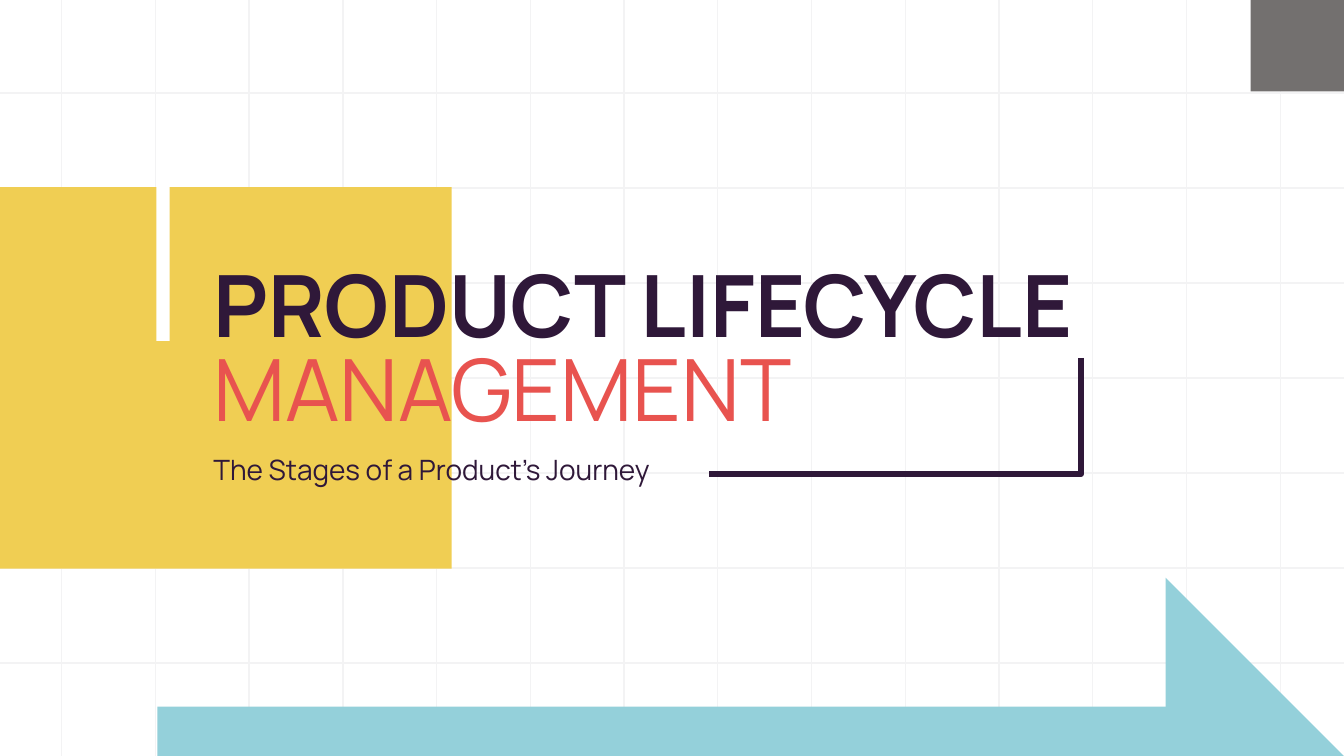
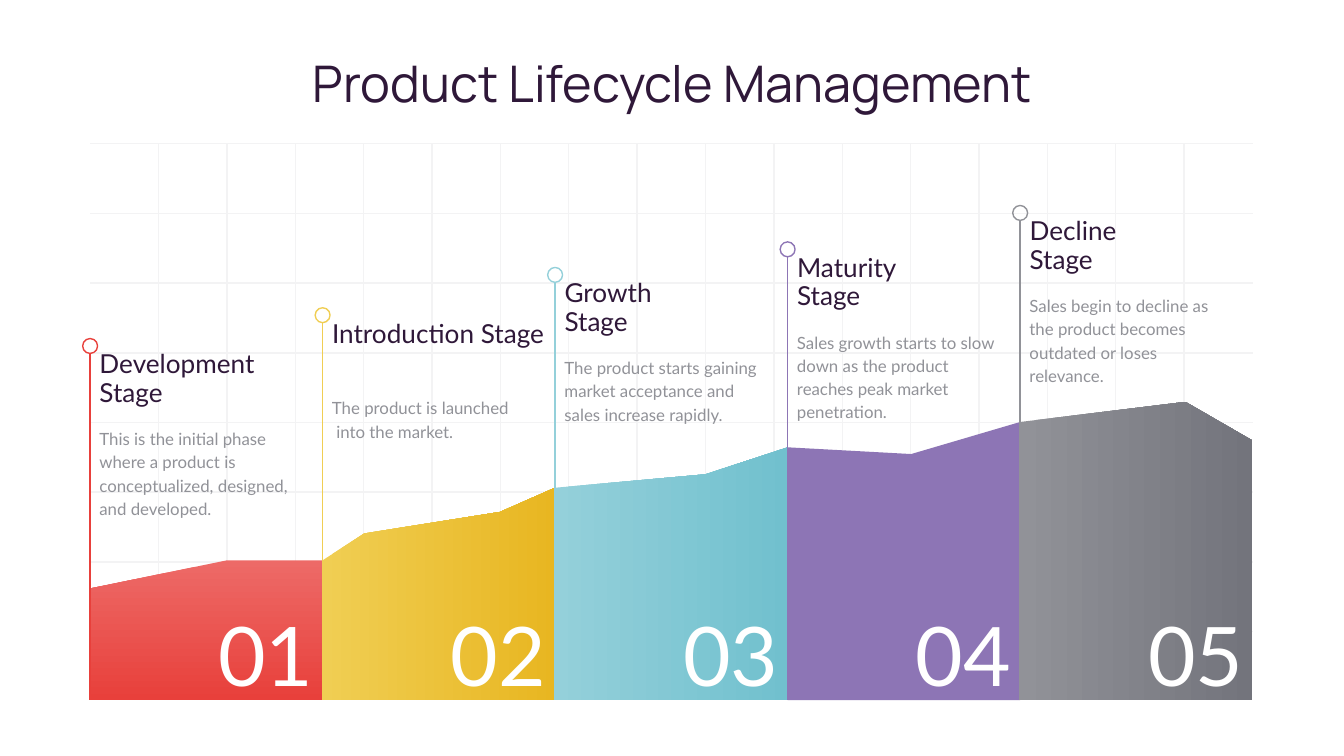
from dataclasses import dataclass

from lxml import etree
from pptx import Presentation
from pptx.dml.color import RGBColor
from pptx.enum import shapes, text
from pptx.oxml import ns
from pptx.util import Pt

# Shared look
INK = RGBColor(0x2F, 0x18, 0x39)
WHITE = RGBColor(0xFF, 0xFF, 0xFF)
GRID = RGBColor(0xF3, 0xF3, 0xF4)
CORAL = RGBColor(0xE8, 0x53, 0x4F)
LIGHT_RED = RGBColor(0xED, 0x6A, 0x67)
RED = RGBColor(0xE8, 0x40, 0x3B)
YELLOW = RGBColor(0xF0, 0xCE, 0x53)
AMBER = RGBColor(0xE8, 0xB6, 0x21)
TEAL = RGBColor(0x94, 0xD0, 0xDA)
DEEP_TEAL = RGBColor(0x71, 0xC0, 0xCE)
PURPLE = RGBColor(0x8D, 0x75, 0xB5)
GRAY = RGBColor(0x91, 0x92, 0x98)
DARK_GRAY = RGBColor(0x73, 0x74, 0x7C)
WARM_GRAY = RGBColor(0x73, 0x70, 0x6F)

HEADING_FONT = "Manrope"
BODY_FONT = "Lato"
THIN = 0.75
WIDTH, HEIGHT = 720, 405
LEFT, RIGHT = text.PP_ALIGN.LEFT, text.PP_ALIGN.RIGHT
CENTER = text.PP_ALIGN.CENTER


@dataclass
class Box:
    left: float
    top: float
    width: float
    height: float

    @property
    def right(self):
        return self.left + self.width

    @property
    def bottom(self):
        return self.top + self.height


@dataclass
class Stage:
    title: list
    body: list
    pin_height: float
    profile: list  # (distance from left edge, height above base)
    colors: tuple
    angle: int = 0


STEP = 124.56  # width of one stage
STAGES = [
    Stage(["Development", "Stage"],
          ["This is the initial phase where a product is conceptualized, designed, and developed."],
          193.7, [(0, 59.8), (73.4, 74.9), (STEP, 74.9)], (LIGHT_RED, RED), 270),
    Stage(["Introduction Stage"],
          ["The product is launched", " into the market."],
          210.2, [(0, 74.9), (22.3, 89.3), (95, 100.8), (STEP, 113.8)], (YELLOW, AMBER)),
    Stage(["Growth", "Stage"],
          ["The product starts gaining market acceptance and sales increase rapidly."],
          231.8, [(0, 113.8), (80.6, 121), (STEP, 135.4)], (TEAL, DEEP_TEAL)),
    Stage(["Maturity", "Stage"],
          ["Sales growth starts to slow down as the product reaches peak market penetration."],
          245.5, [(0, 135.4), (66.2, 131.8), (STEP, 149)], (PURPLE,)),
    Stage(["Decline", "Stage"],
          ["Sales begin to decline as the product becomes outdated or loses relevance."],
          265, [(0, 149), (88.6, 159.8), (STEP, 139)], (GRAY, DARK_GRAY)),
]


# Drawing helpers
def paint(shape, colors=(), angle=0, line=None, line_width=THIN):
    """Fill with nothing, one colour or a two-colour gradient."""
    shape.shadow.inherit = False
    if not colors:
        shape.fill.background()
    elif len(colors) == 1:
        shape.fill.solid()
        shape.fill.fore_color.rgb = colors[0]
    else:
        shape.fill.gradient()
        shape.fill.gradient_angle = angle
        for position, (stop, color) in enumerate(zip(shape.fill.gradient_stops, colors)):
            stop.position = position
            stop.color.rgb = color
    if line is None:
        shape.line.fill.background()
    else:
        shape.line.color.rgb = line
        shape.line.width = Pt(line_width)


def add_preset(slide, kind, box, **look):
    shape = slide.shapes.add_shape(
        kind, Pt(box.left), Pt(box.top), Pt(box.width), Pt(box.height))
    paint(shape, **look)


def add_rectangle(slide, box, color):
    add_preset(slide, shapes.MSO_SHAPE.RECTANGLE, box, colors=(color,))


def add_outline(slide, points, close=True, **look):
    start, *others = [(Pt(x), Pt(y)) for x, y in points]
    builder = slide.shapes.build_freeform(*start, scale=1.0)
    builder.add_line_segments(others, close=close)
    paint(builder.convert_to_shape(), **look)


def add_line(slide, x1, y1, x2, y2, color):
    line = slide.shapes.add_connector(
        shapes.MSO_CONNECTOR.STRAIGHT, Pt(x1), Pt(y1), Pt(x2), Pt(y2))
    line.line.color.rgb = color
    line.line.width = Pt(THIN)
    etree.SubElement(line.element.spPr, ns.qn("a:effectLst"))


def add_text(slide, box, lines, size, color, font=HEADING_FONT, bold=False,
             align=LEFT, spacing=None):
    shape = slide.shapes.add_textbox(
        Pt(box.left), Pt(box.top), Pt(box.width), Pt(box.height))
    frame = shape.text_frame
    frame.margin_left = frame.margin_top = frame.margin_right = frame.margin_bottom = 0
    frame.word_wrap = True
    frame.auto_size = text.MSO_AUTO_SIZE.SHAPE_TO_FIT_TEXT
    frame.text = "\n".join(lines)
    for paragraph in frame.paragraphs:
        paragraph.alignment = align
        paragraph.line_spacing = spacing
        paragraph.font.name = font
        paragraph.font.size = Pt(size)
        paragraph.font.bold = bold
        paragraph.font.color.rgb = color


def add_grid(slide, box, first_x, step_x, columns, first_y, step_y, rows):
    for column in range(columns):
        x = box.left + first_x + column * step_x
        add_line(slide, x, box.top, x, box.bottom, GRID)
    for row in range(rows):
        y = box.top + first_y + row * step_y
        add_line(slide, box.left, y, box.right, y, GRID)


# Cover
def add_corner_arrow(slide, box):
    head = box.height
    shaft = Box(box.left, box.bottom - 26.5, box.width - head + 17, 26.5)
    add_rectangle(slide, shaft, TEAL)
    add_outline(slide, [(box.right - head, box.bottom), (box.right - head, box.top),
                        (box.right, box.bottom)], colors=(TEAL,))


def add_cover_title(slide, box):
    # Yellow block with its white notch
    add_rectangle(slide, Box(box.left, box.top, 242, box.height), YELLOW)
    add_rectangle(slide, Box(box.left + 83.8, box.top - 0.5, 7.2, 83), WHITE)
    # Wording
    left = box.left + 114.3
    add_text(slide, Box(left, box.top + 34.4, 557, 55.4), ["PRODUCT LIFECYCLE"],
             46, INK, bold=True)
    add_text(slide, Box(left, box.top + 79.8, 557, 55.4), ["MANAGEMENT"], 46, CORAL)
    add_text(slide, Box(left, box.top + 142.4, 260.6, 18),
             ["The Stages of a Product’s Journey"], 15, INK)
    # Corner rule
    base = box.top + 153.8
    add_outline(slide, [(box.right, base - 62.2), (box.right, base), (box.right - 199.2, base)],
                close=False, line=INK, line_width=3)


def build_cover(slide, box):
    add_grid(slide, box, 33, 50.22, 14, 49.9, 50.87, 7)
    add_corner_arrow(slide, Box(84.4, box.bottom - 95.6, box.right - 84.4, 95.6))
    add_rectangle(slide, Box(box.right - 50, box.top, 50, 49), WARM_GRAY)
    add_cover_title(slide, Box(box.left, 100.2, 579.2, 204.4))


# Lifecycle chart
def add_stage(slide, box, number, stage):
    color = RED if number == 1 else stage.colors[0]
    # Area
    outline = [(box.left + x, box.bottom - y) for x, y in stage.profile]
    add_outline(slide, [(box.left, box.bottom), *outline, (box.right, box.bottom)],
                colors=stage.colors, angle=stage.angle)
    # Pin
    top, pin_size = box.bottom - stage.pin_height, 8
    add_line(slide, box.left, top + pin_size, box.left, box.bottom, color)
    add_preset(slide, shapes.MSO_SHAPE.OVAL,
               Box(box.left - pin_size / 2, top, pin_size, pin_size), line=color)
    # Wording
    left = box.left + 5
    add_text(slide, Box(left, top + 6.8, 116.6, 30.2), stage.title, 14, INK,
             BODY_FONT, spacing=0.9)
    add_text(slide, Box(left, top + 46.8, 108, 48.2), stage.body, 9, GRAY,
             BODY_FONT, spacing=1.15)
    add_text(slide, Box(box.right - 77, box.bottom - 45.4, 72, 48.2), [f"{number:02}"],
             44, WHITE, BODY_FONT, align=RIGHT, spacing=0.9)


def build_lifecycle(slide, box):
    chart = Box(48.3, 77, STEP * len(STAGES), 298.1)
    add_grid(slide, chart, 36.6, 36.63, 16, 0, 37.34, 8)
    add_text(slide, Box(box.left + 28.4, box.top + 28.1, box.width - 56.8, 32.4),
             ["Product Lifecycle Management"], 27, INK, align=CENTER)
    for index, stage in enumerate(STAGES):
        column = Box(chart.left + index * STEP, chart.top, STEP, chart.height)
        add_stage(slide, column, index + 1, stage)


def main():
    presentation = Presentation()
    presentation.slide_width, presentation.slide_height = Pt(WIDTH), Pt(HEIGHT)
    page = Box(0, 0, WIDTH, HEIGHT)
    for build in (build_cover, build_lifecycle):
        build(presentation.slides.add_slide(presentation.slide_layouts[6]), page)
    presentation.save("out.pptx")


if __name__ == "__main__":
    main()
